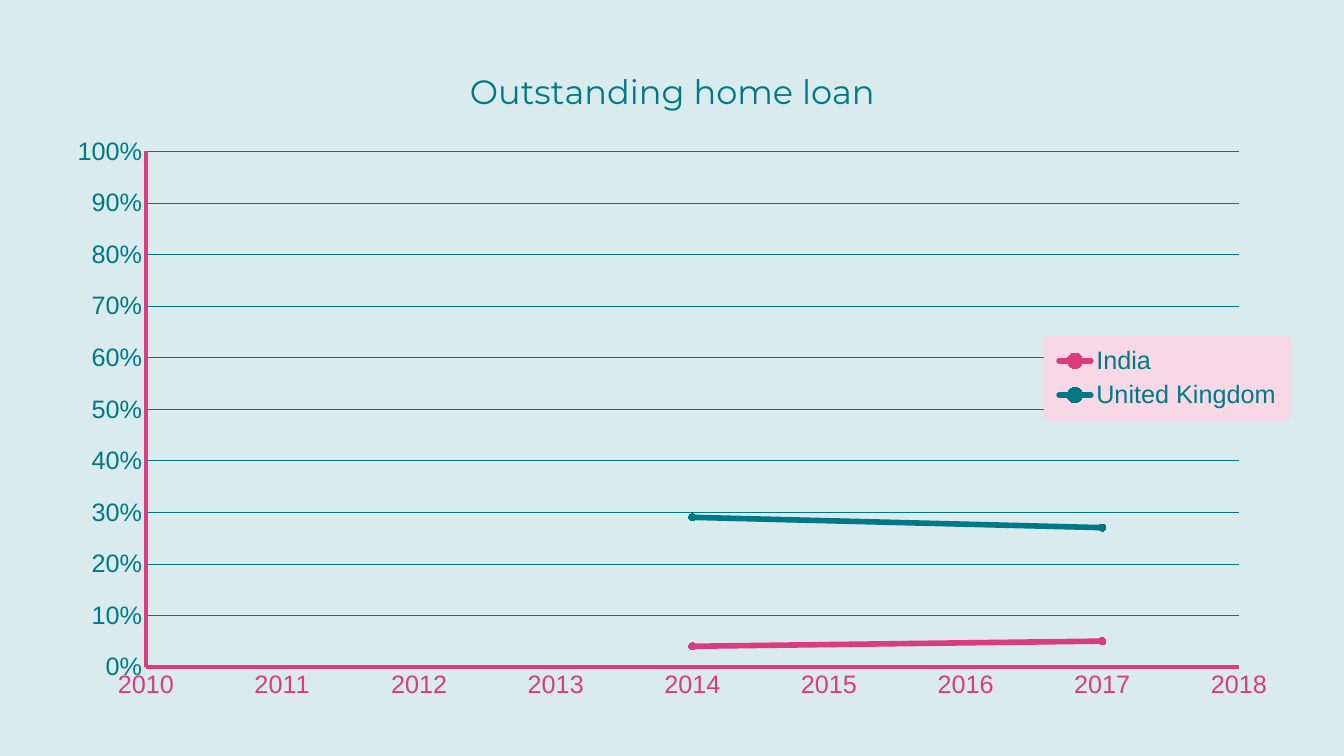
"""Build a slide with a scatter chart of outstanding home loans in two countries."""
from pptx import Presentation
from pptx.chart.data import XyChartData
from pptx.dml.color import RGBColor
from pptx.enum.chart import XL_CHART_TYPE as ChartType
from pptx.enum.chart import XL_LEGEND_POSITION as LegendPosition
from pptx.enum.chart import XL_MARKER_STYLE as Marker
from pptx.enum.chart import XL_TICK_MARK as TickMark
from pptx.oxml import parse_xml
from pptx.oxml.ns import nsdecls, qn
from pptx.util import Pt

TEAL = RGBColor(0x00, 0x79, 0x87)
PINK = RGBColor(0xDA, 0x3C, 0x7E)
PALE_TEAL = RGBColor(0xD9, 0xEB, 0xED)
PALE_PINK = RGBColor(0xF8, 0xD8, 0xE5)
CHART_WIDTH, CHART_HEIGHT = 885.6, 478.1
YEARS = [2010, 2014, 2017]
LOANS = [
    ("India", PINK, [None, 0.04, 0.05]),
    ("United Kingdom", TEAL, [None, 0.29, 0.27]),
]


def set_text(frame, text, *, font, size, color):
    """Write one formatted paragraph into a text frame."""
    para = frame.paragraphs[0]
    span = para.add_run()
    span.text = text
    for target in (para.font, span.font):
        target.name = font
        target.size = Pt(size)
        target.bold = False
        target.color.rgb = color


def place(element, index, target, **points):
    """Fix a chart part at a place given in points within the chart."""
    for layout in element.findall(qn("c:layout")):
        element.remove(layout)
    lengths = {"x": CHART_WIDTH, "y": CHART_HEIGHT, "w": CHART_WIDTH, "h": CHART_HEIGHT}
    inner = '<c:layoutTarget val="inner"/>' if target == "inner" else ""
    modes = '<c:xMode val="edge"/><c:yMode val="edge"/>'
    shares = "".join(
        f'<c:{key} val="{value / lengths[key]:.4f}"/>' for key, value in points.items()
    )
    element.insert(index, parse_xml(
        f'<c:layout {nsdecls("c")}><c:manualLayout>{inner}{modes}{shares}'
        "</c:manualLayout></c:layout>"
    ))


deck = Presentation()
deck.slide_width, deck.slide_height = Pt(960), Pt(540)
page = deck.slides.add_slide(deck.slide_layouts[6])
page.background.fill.solid()
page.background.fill.fore_color.rgb = PALE_TEAL

chart_data = XyChartData()
for country, _, shares in LOANS:
    country_data = chart_data.add_series(country)
    for year, share in zip(YEARS, shares):
        country_data.add_data_point(year, share)

chart = page.shapes.add_chart(
    ChartType.XY_SCATTER_LINES, Pt(37.4), Pt(31), Pt(CHART_WIDTH), Pt(CHART_HEIGHT), chart_data
).chart
for point in list(chart._chartSpace.iter(qn("c:pt"))):
    if point.findtext(qn("c:v")) in ("None", ""):
        point.getparent().remove(point)
chart.font.name = "Arial"
chart.font.size = Pt(18)
chart.font.color.rgb = TEAL
chart.plots[0].vary_by_categories = False
place(chart._chartSpace.chart.plotArea, 0, "inner", x=66.9, y=77, w=780.7, h=368.4)

chart.has_title = True
set_text(chart.chart_title.text_frame, "Outstanding home loan",
         font="Montserrat", size=24, color=TEAL)
place(chart.chart_title._element, 1, "outer", x=294, y=13.4)

axes = [
    (chart.category_axis, PINK, 2010, 2018, 1, "0"),
    (chart.value_axis, TEAL, 0, 1, 0.1, "0%"),
]
for axis, color, low, high, step, number_format in axes:
    axis.minimum_scale, axis.maximum_scale, axis.major_unit = low, high, step
    axis.major_tick_mark = axis.minor_tick_mark = TickMark.NONE
    axis.has_major_gridlines = color == TEAL
    labels = axis.tick_labels
    labels.number_format = number_format
    labels.number_format_is_linked = False
    labels.font.name = "Arial"
    labels.font.size = Pt(18)
    labels.font.color.rgb = color
    axis.format.line.color.rgb = PINK
    axis.format.line.width = Pt(2.5)

grid_line = chart.value_axis.major_gridlines.format.line
grid_line.color.rgb = TEAL
grid_line.width = Pt(0.25)

for series, (_, color, _) in zip(chart.plots[0].series, LOANS):
    series.format.line.color.rgb = color
    series.format.line.width = Pt(4)
    series.format.line._get_or_add_ln().set("cap", "rnd")
    series.marker.style = Marker.CIRCLE
    series.marker.size = 5
    series.marker.format.fill.solid()
    series.marker.format.fill.fore_color.rgb = color
    series.marker.format.line.color.rgb = color

chart.has_legend = True
legend = chart.legend
legend.position = LegendPosition.RIGHT
legend.include_in_layout = True
legend.font.name = "Arial"
legend.font.size = Pt(18)
legend.font.color.rgb = TEAL
place(legend._element, 1, "outer", x=712.3, y=212.3, w=168.4, h=53.4)
legend_fill = f'<a:solidFill><a:srgbClr val="{PALE_PINK}"/></a:solidFill>'
legend._element.find(qn("c:txPr")).addprevious(parse_xml(
    f'<c:spPr {nsdecls("c", "a")}>{legend_fill}'
    f'<a:ln w="{Pt(8)}" cap="rnd">{legend_fill}<a:round/></a:ln></c:spPr>'
))

deck.save("out.pptx")
